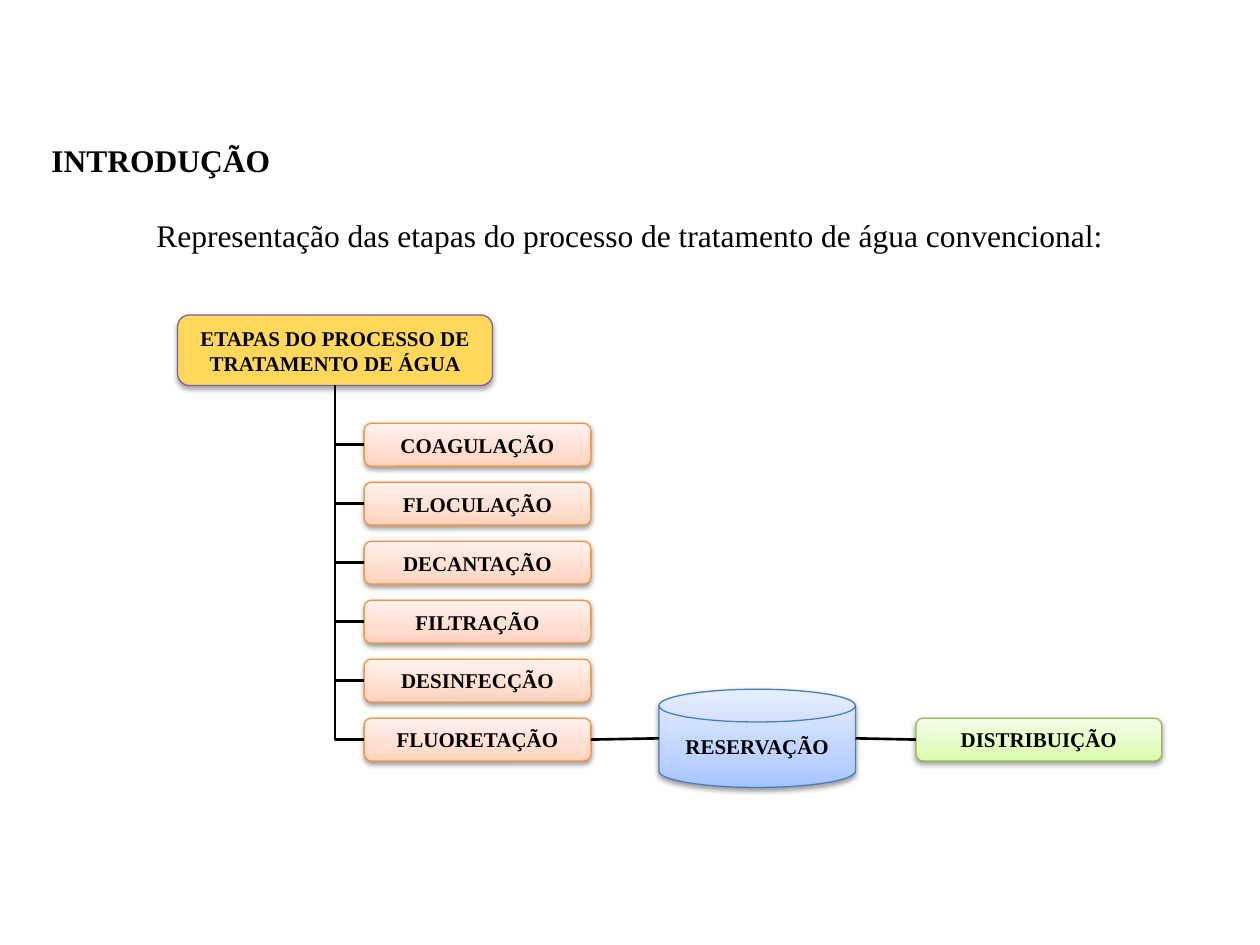
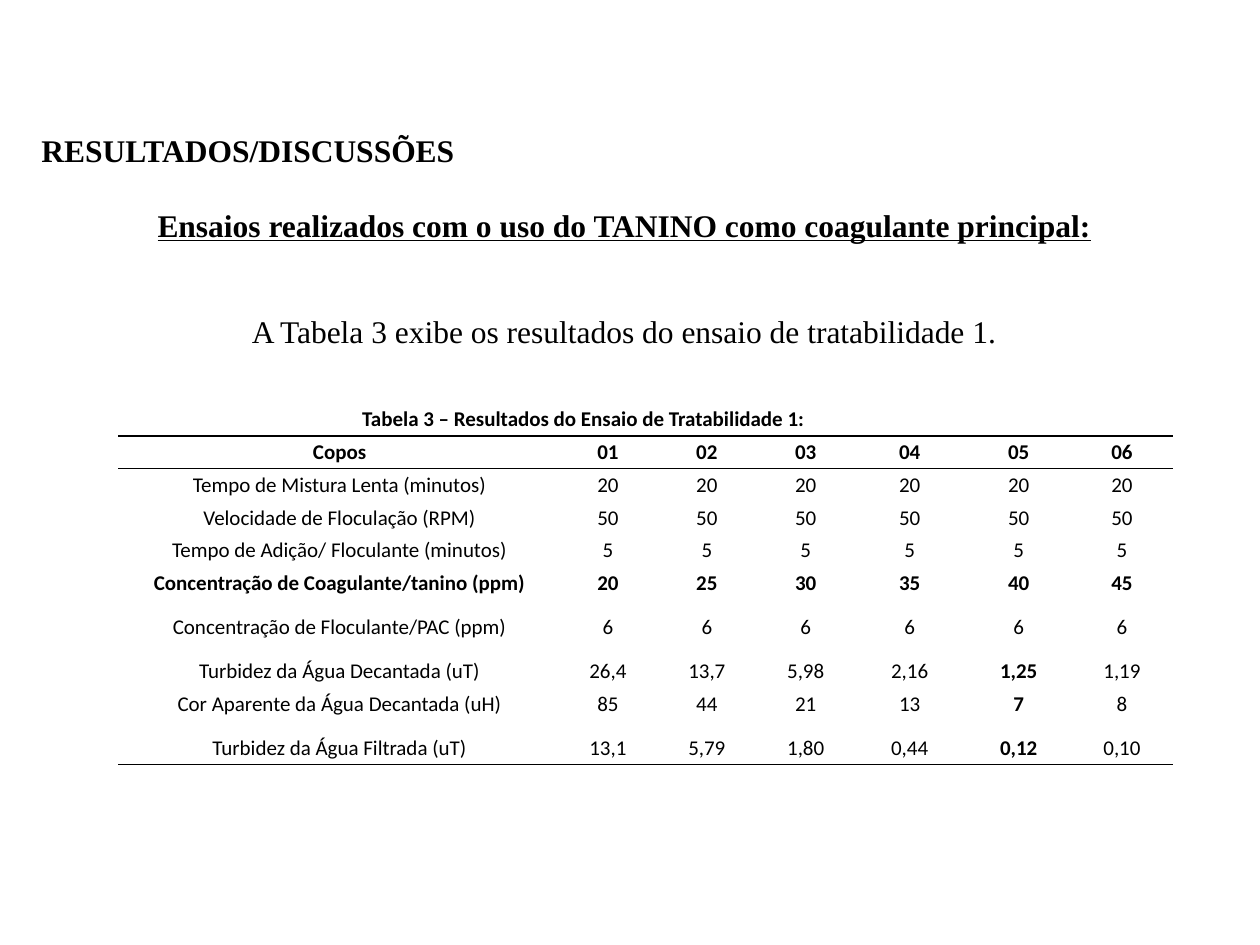
from copy import deepcopy

from lxml.etree import SubElement
from pptx import Presentation
from pptx.dml.color import RGBColor
from pptx.enum.shapes import MSO_CONNECTOR, MSO_SHAPE
from pptx.enum.text import MSO_ANCHOR, MSO_AUTO_SIZE, PP_ALIGN
from pptx.oxml.ns import qn
from pptx.util import Inches, Pt

# Shared style
SERIF, SANS = "Times New Roman", "Calibri"
BLACK = "000000"
GRADIENT_POSITIONS = (0, 0.35, 1)
PEACH = ("FFD2BD", "FFDED0", "FFF2ED")
BLUE = ("A4C4FF", "BFD4FF", "E6EEFF")
GREEN = ("DAFDA7", "E4FCC2", "F5FFE7")
PLAIN_TABLE_STYLE = "{2D5ABB26-0587-4C30-8999-92F81FD0307C}"

# Flow diagram
STEPS = ["COAGULAÇÃO", "FLOCULAÇÃO", "DECANTAÇÃO", "FILTRAÇÃO",
         "DESINFECÇÃO", "FLUORETAÇÃO"]
STEP_LEFT, STEP_WIDTH, STEP_HEIGHT = 2.89, 1.8, 0.34
FIRST_STEP_TOP, LAST_STEP_TOP = 3.36, 5.7
TRUNK_X, TRUNK_TOP = 2.66, 3.06

# Results table
CAPTION = "Tabela 3 – Resultados do Ensaio de Tratabilidade 1:\t\t"
CAPTION_TABS = [(1.41, "l"), (3.08, "ctr"), (3.41, "l")]
RESULTS = [
    ["Copos", "01", "02", "03", "04", "05", "06"],
    ["Tempo de Mistura Lenta (minutos)"] + ["20"] * 6,
    ["Velocidade de Floculação (RPM)"] + ["50"] * 6,
    ["Tempo de Adição/ Floculante (minutos)"] + ["5"] * 6,
    ["Concentração de Coagulante/tanino (ppm)", "20", "25", "30", "35", "40", "45"],
    ["Concentração de Floculante/PAC (ppm)"] + ["6"] * 6,
    ["Turbidez da Água Decantada (uT)", "26,4", "13,7", "5,98", "2,16", "1,25", "1,19"],
    ["Cor Aparente da Água Decantada (uH)", "85", "44", "21", "13", "7", "8"],
    ["Turbidez da Água Filtrada (uT)", "13,1", "5,79", "1,80", "0,44", "0,12", "0,10"],
]
COLUMN_WIDTHS = [3.51, 0.75, 0.82, 0.75, 0.9, 0.83, 0.81]
ROW_HEIGHTS = [0.26] * 5 + [0.35, 0.35, 0.26, 0.35, 0.26]
BOLD_ROWS = (0, 1, 5)
BEST_CUP, FIRST_TURBIDITY_ROW = 5, 7
RULES = {0: "B", 1: "TB", 2: "T", 9: "B"}


def rgb(color):
    return RGBColor.from_string(color)


def write(paragraph, text, size, font=SERIF, bold=True, align=PP_ALIGN.CENTER):
    paragraph.text = text
    paragraph.alignment = align
    paragraph.font.name = font
    paragraph.font.size = Pt(size)
    paragraph.font.bold = bold
    paragraph.font.color.rgb = rgb(BLACK)


def add_heading(slide, left, top, width, height, title, lines):
    """Section title, then centred lines given as (text, emphasised, space before)."""
    heading = slide.shapes.add_textbox(
        Inches(left), Inches(top), Inches(width), Inches(height))
    frame = heading.text_frame
    frame.word_wrap = True
    frame.auto_size = MSO_AUTO_SIZE.NONE
    frame.margin_top = Inches(0.65)
    write(frame.paragraphs[0], title, 18, align=PP_ALIGN.LEFT)
    for text, emphasised, gap in lines:
        paragraph = frame.add_paragraph()
        write(paragraph, text, 18, bold=emphasised)
        paragraph.font.underline = emphasised
        paragraph.space_before = Pt(gap)


def fill_gradient(shape, colors):
    shape.fill.gradient()
    shape.fill.gradient_angle = 90
    stop_list = shape._element.spPr.find(".//" + qn("a:gsLst"))
    stop_list.append(deepcopy(stop_list[0]))
    for stop, position, color in zip(shape.fill.gradient_stops,
                                     GRADIENT_POSITIONS, colors):
        stop.position = position
        stop.color.rgb = rgb(color)


def add_shadow(shape, opacity, distance):
    shape.shadow.inherit = False
    effects = shape._element.spPr.find(qn("a:effectLst"))
    shadow = SubElement(effects, qn("a:outerShdw"), blurRad=str(Pt(3.1)),
                        dist=str(Pt(distance)), dir="5400000", rotWithShape="0")
    color = SubElement(shadow, qn("a:srgbClr"), val=BLACK)
    SubElement(color, qn("a:alpha"), val=str(opacity * 1000))


def add_stage(slide, left, top, width, height, text, fill, outline,
              kind=MSO_SHAPE.ROUNDED_RECTANGLE, opacity=38, distance=1.6):
    stage = slide.shapes.add_shape(
        kind, Inches(left), Inches(top), Inches(width), Inches(height))
    if isinstance(fill, str):
        stage.fill.solid()
        stage.fill.fore_color.rgb = rgb(fill)
    else:
        fill_gradient(stage, fill)
    stage.line.color.rgb = rgb(outline)
    stage.line.width = Pt(0.75)
    add_shadow(stage, opacity, distance)
    stage.text_frame.word_wrap = True
    stage.text_frame.vertical_anchor = MSO_ANCHOR.MIDDLE
    write(stage.text_frame.paragraphs[0], text, 12)


def add_link(slide, x1, y1, x2, y2, kind=MSO_CONNECTOR.STRAIGHT):
    link = slide.shapes.add_connector(
        kind, Inches(x1), Inches(y1), Inches(x2), Inches(y2))
    link.line.color.rgb = rgb(BLACK)
    link.line.width = Pt(1.5)
    SubElement(link._element.spPr, qn("a:effectLst"))
    return link


def add_branch(slide, x1, y1, x2, y2):
    """One-corner connector: down from the start, then right to the end."""
    across, down = x2 - x1, y2 - y1
    left = (x1 + x2 - down) / 2
    top = (y1 + y2 - across) / 2
    branch = add_link(slide, left, top, left + down, top + across,
                      MSO_CONNECTOR.ELBOW)
    properties = branch._element.spPr
    properties.find(qn("a:prstGeom")).set("prst", "bentConnector2")
    frame = properties.find(qn("a:xfrm"))
    frame.set("rot", "16200000")
    frame.set("flipH", "1")


def set_rules(cell, ruled_sides):
    """Give all four sides a line or none; lines go before the cell fill."""
    properties = cell._tc.get_or_add_tcPr()
    for index, side in enumerate("LRTB"):
        rule = SubElement(properties, qn(f"a:ln{side}"), w=str(Pt(1)))
        if side in ruled_sides:
            fill = SubElement(rule, qn("a:solidFill"))
            SubElement(fill, qn("a:srgbClr"), val=BLACK)
        else:
            SubElement(rule, qn("a:noFill"))
        properties.insert(index, rule)


def add_tabs(paragraph, stops):
    tabs = SubElement(paragraph._p.get_or_add_pPr(), qn("a:tabLst"))
    for position, align in stops:
        SubElement(tabs, qn("a:tab"), pos=str(Inches(position)), algn=align)


def write_cell(cell, text, bold):
    cell.fill.background()
    cell.margin_left = cell.margin_right = Inches(0.05)
    cell.margin_top = cell.margin_bottom = 0
    paragraph = cell.text_frame.paragraphs[0]
    write(paragraph, text, 12, SANS, bold)
    paragraph.line_spacing = 1.15
    paragraph.space_after = Pt(10)


def add_results_table(slide, left, top):
    table = slide.shapes.add_table(
        len(ROW_HEIGHTS), len(COLUMN_WIDTHS), Inches(left), Inches(top),
        Inches(sum(COLUMN_WIDTHS)), Inches(sum(ROW_HEIGHTS))).table
    table.first_row = table.horz_banding = False
    table._tbl.tblPr.find(qn("a:tableStyleId")).text = PLAIN_TABLE_STYLE
    for column, width in zip(table.columns, COLUMN_WIDTHS):
        column.width = Inches(width)
    for row, height in zip(table.rows, ROW_HEIGHTS):
        row.height = Inches(height)

    # Caption across all columns; its tabs shift it left of the middle
    caption = table.cell(0, 0)
    caption.merge(table.cell(0, len(COLUMN_WIDTHS) - 1))
    add_tabs(caption.text_frame.paragraphs[0], CAPTION_TABS)
    write_cell(caption, CAPTION, True)

    for r, values in enumerate(RESULTS, start=1):
        for c, value in enumerate(values):
            best = c == BEST_CUP and r >= FIRST_TURBIDITY_ROW
            write_cell(table.cell(r, c), value, r in BOLD_ROWS or best)
    for r in range(len(ROW_HEIGHTS)):
        for c in range(len(COLUMN_WIDTHS)):
            set_rules(table.cell(r, c), RULES.get(r, ""))


def build_introduction(slide):
    add_heading(slide, 0.31, 0.47, 9.38, 1.62, "INTRODUÇÃO", [
        ("Representação das etapas do processo de tratamento de água convencional:",
         False, 21)])

    # Treatment steps hanging from one trunk
    add_stage(slide, 1.41, 2.5, 2.5, 0.56, "ETAPAS DO PROCESSO DE TRATAMENTO DE ÁGUA",
              "FFD85B", "7D60A0", opacity=35, distance=1.8)
    pitch = (LAST_STEP_TOP - FIRST_STEP_TOP) / (len(STEPS) - 1)
    for i, step in enumerate(STEPS):
        top = FIRST_STEP_TOP + i * pitch
        add_stage(slide, STEP_LEFT, top, STEP_WIDTH, STEP_HEIGHT, step,
                  PEACH, "F69240")
        add_branch(slide, TRUNK_X, TRUNK_TOP, STEP_LEFT, top + STEP_HEIGHT / 2)

    # Storage and distribution
    add_stage(slide, 5.23, 5.47, 1.56, 0.78, "RESERVAÇÃO", BLUE, "4B7EBC",
              MSO_SHAPE.FLOWCHART_MAGNETIC_DISK)
    add_stage(slide, 7.27, LAST_STEP_TOP, 1.95, STEP_HEIGHT, "DISTRIBUIÇÃO",
              GREEN, "98B955")
    add_link(slide, STEP_LEFT + STEP_WIDTH, 5.87, 5.23, 5.86)
    add_link(slide, 6.79, 5.86, 7.27, 5.87)


def build_results(slide):
    add_heading(slide, 0.23, 0.39, 9.45, 2.46, "RESULTADOS/DISCUSSÕES", [
        ("Ensaios realizados com o uso do TANINO como coagulante principal:", True, 21),
        ("A Tabela 3 exibe os resultados do ensaio de tratabilidade 1.", False, 39)])
    add_results_table(slide, 0.94, 3.2)


def main():
    deck = Presentation()
    deck.slide_width, deck.slide_height = Inches(10), Inches(7.5)
    blank = deck.slide_layouts[6]
    for build in (build_introduction, build_results):
        build(deck.slides.add_slide(blank))
    deck.save("out.pptx")


if __name__ == "__main__":
    main()
